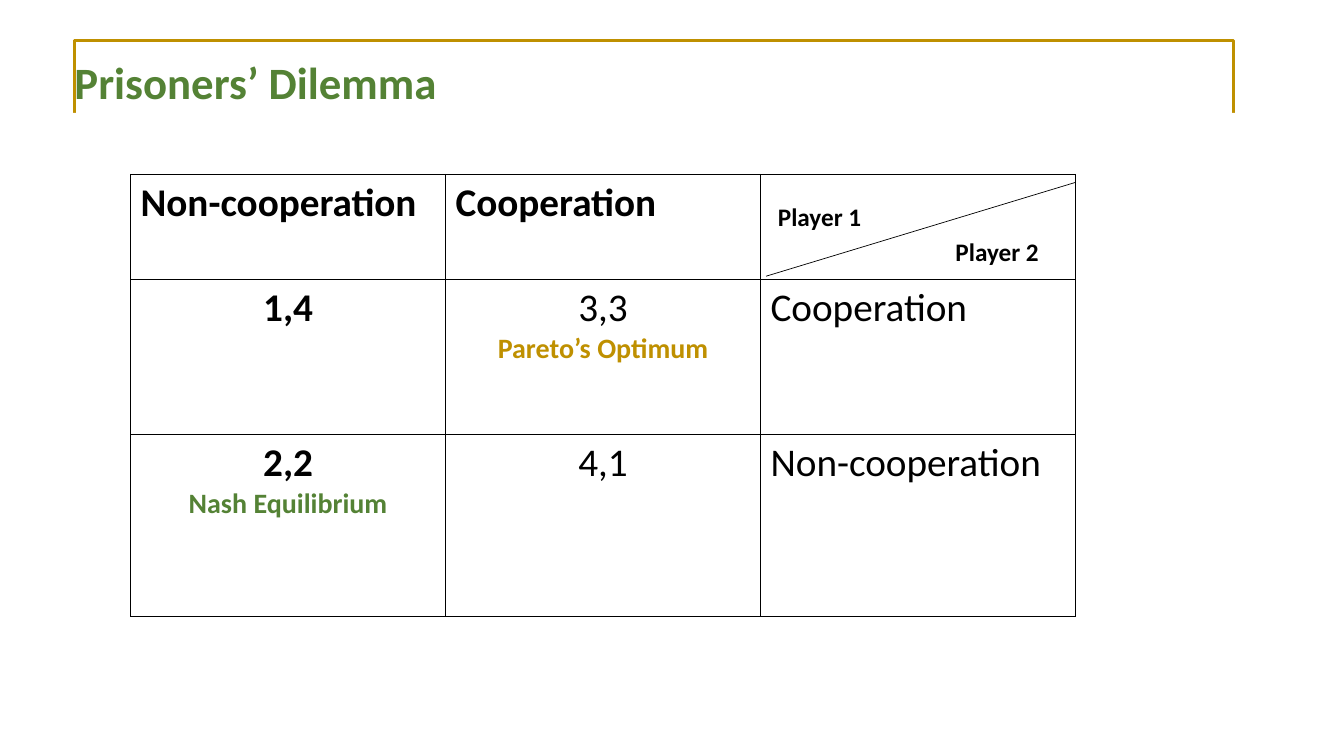
"""Build the Prisoners’ Dilemma payoff slide."""
import lxml.etree
import pptx
import pptx.dml.color
import pptx.enum.shapes
import pptx.enum.text
import pptx.oxml.ns
import pptx.util

Pt = pptx.util.Pt
qn = pptx.oxml.ns.qn
Align = pptx.enum.text.PP_ALIGN
AutoSize = pptx.enum.text.MSO_AUTO_SIZE

BLACK = pptx.dml.color.RGBColor(0x00, 0x00, 0x00)
WHITE = pptx.dml.color.RGBColor(0xFF, 0xFF, 0xFF)
GOLD = pptx.dml.color.RGBColor(0xBF, 0x90, 0x00)
GREEN = pptx.dml.color.RGBColor(0x54, 0x82, 0x35)


class PayoffSlide:
    def __init__(self, slide, face):
        self.slide = slide
        self.face = face

    def add_words(self, paragraph, text, size, color=BLACK, bold=True, align=Align.LEFT):
        paragraph.alignment = align
        run = paragraph.add_run()
        run.text = text
        font_format = {"name": self.face, "size": Pt(size), "bold": bold}
        for attribute, value in font_format.items():
            setattr(run.font, attribute, value)
        run.font.color.rgb = color

    def title(self, text, left, top, width, height):
        heading = self.slide.shapes.title
        place = {"left": left, "top": top, "width": width, "height": height}
        for attribute, value in place.items():
            setattr(heading, attribute, Pt(value))
        frame_format = {
            "vertical_anchor": pptx.enum.text.MSO_ANCHOR.MIDDLE,
            "auto_size": AutoSize.NONE,
            "word_wrap": True,
        }
        for attribute, value in frame_format.items():
            setattr(heading.text_frame, attribute, value)
        heading.text_frame.paragraphs[0].line_spacing = 0.9
        self.add_words(heading.text_frame.paragraphs[0], text, 32, GREEN)

    def rectangle(self, left, top, width, height, fill=None, line=None):
        block = self.slide.shapes.add_shape(
            pptx.enum.shapes.MSO_SHAPE.RECTANGLE, Pt(left), Pt(top), Pt(width), Pt(height))
        block.shadow.inherit = False
        if fill is None:
            block.fill.background()
        else:
            block.fill.solid()
            block.fill.fore_color.rgb = fill
        if line is None:
            block.line.fill.background()
        else:
            block.line.color.rgb = line
            block.line.width = Pt(2.25)

    def label(self, text, left, top, width, height):
        player = self.slide.shapes.add_textbox(Pt(left), Pt(top), Pt(width), Pt(height))
        player.text_frame.word_wrap = True
        player.text_frame.auto_size = AutoSize.SHAPE_TO_FIT_TEXT
        self.add_words(player.text_frame.paragraphs[0], text, 18)

    def diagonal(self, *ends):
        divider = self.slide.shapes.add_connector(
            pptx.enum.shapes.MSO_CONNECTOR.STRAIGHT, *map(Pt, ends))
        divider.line.color.rgb = BLACK
        divider.line.width = Pt(0.5)
        lxml.etree.SubElement(divider._element.spPr, qn("a:effectLst"))

    def border(self, cell):
        properties = cell._tc.get_or_add_tcPr()
        for side in ("a:lnL", "a:lnR", "a:lnT", "a:lnB"):
            edge = lxml.etree.SubElement(properties, qn(side), w=str(Pt(1)))
            ink = lxml.etree.SubElement(edge, qn("a:solidFill"))
            lxml.etree.SubElement(ink, qn("a:srgbClr"), val=str(BLACK))
        cell.fill.background()

    def table(self, rows, left, top, column_width, row_heights):
        columns = len(rows[0])
        matrix = self.slide.shapes.add_table(
            len(rows), columns, Pt(left), Pt(top),
            Pt(column_width * columns), Pt(sum(row_heights))).table
        for banding in ("first_row", "horz_banding"):
            setattr(matrix, banding, False)
        for column in matrix.columns:
            column.width = Pt(column_width)
        for row, height, contents in zip(matrix.rows, row_heights, rows):
            row.height = Pt(height)
            for cell, lines in zip(row.cells, contents):
                self.border(cell)
                for number, line in enumerate(lines):
                    frame = cell.text_frame
                    paragraph = frame.add_paragraph() if number else frame.paragraphs[0]
                    self.add_words(paragraph, **line)


def strategy(text, bold):
    return [{"text": text, "size": 28, "bold": bold}]


def payoff(text, bold, note=None, color=None):
    lines = [{"text": text, "size": 28, "bold": bold, "align": Align.CENTER}]
    if note:
        lines.append({"text": note, "size": 20, "color": color, "align": Align.CENTER})
    return lines


def main():
    deck = pptx.Presentation()
    deck.slide_width, deck.slide_height = Pt(960), Pt(540)
    page = PayoffSlide(deck.slides.add_slide(deck.slide_layouts[5]), "Calibri")
    page.title("Prisoners’ Dilemma", 46, 24, 828, 74)
    page.rectangle(53.3, 28.8, 828, 90.7, line=GOLD)
    page.rectangle(46, 80.6, 847.4, 44, fill=WHITE)
    page.table(
        [
            [strategy("Non-cooperation", True), strategy("Cooperation", True), []],
            [payoff("1,4", True), payoff("3,3", False, "Pareto’s Optimum", GOLD),
             strategy("Cooperation", False)],
            [payoff("2,2", True, "Nash Equilibrium", GREEN), payoff("4,1", False),
             strategy("Non-cooperation", False)],
        ],
        93.3, 124.6, 225, [74.8, 110.7, 130.3])
    page.diagonal(768.2, 130.3, 547.2, 197.3)
    page.label("Player 2", 675.4, 164.9, 92.9, 29)
    page.label("Player 1", 548.6, 140.2, 92.9, 29)
    deck.save("out.pptx")


if __name__ == "__main__":
    main()
